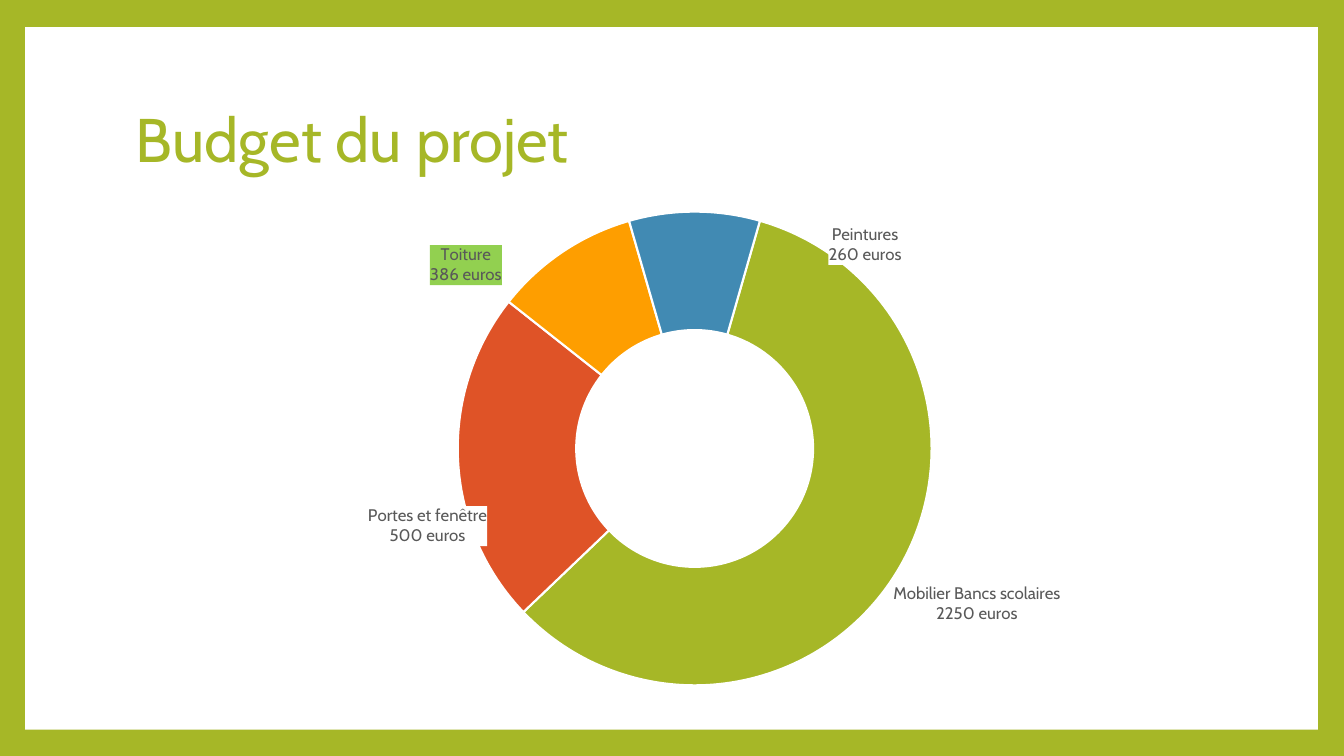
import math

from lxml import etree
from pptx import Presentation
from pptx.chart.data import CategoryChartData
from pptx.dml.color import RGBColor
from pptx.enum import chart as charts, shapes, text
from pptx.oxml.ns import qn
from pptx.util import Inches, Pt

THEME = {
    "font": "Cabin",
    "green": "A6B727", "white": "FFFFFF", "grey": "595959", "highlight": "92D050",
    "title_size": 44, "label_size": 12,
}
TITLE = "Budget du projet"
# expense, amount, share, slice colour, label fill, label centre (x, y)
BUDGET = [
    ("Mobilier Bancs scolaires", "2250 euros", 59, "A6B727", "white", (9.69, 5.99)),
    ("Portes et fenêtre", "500 euros", 23, "DF5327", "white", (4.24, 5.22)),
    ("Toiture", "386 euros", 10, "FE9E00", "highlight", (4.62, 2.63)),
    ("Peintures", "260 euros", 9, "418AB3", "white", (8.58, 2.43)),
]
CHART_BOX = (2.99, 1.96, 7.72, 4.99)
RING_CENTRE = (6.89, 4.45)
RING_RADIUS = 2.35
HOLE_PERCENT = 50
START_ANGLE = 16
C15 = "http://schemas.microsoft.com/office/drawing/2012/chart"


def color(value):
    return RGBColor.from_string(THEME.get(value, value))


def style(font, size, ink):
    values = {"name": THEME["font"], "size": Pt(size), "bold": False}
    for key, value in values.items():
        setattr(font, key, value)
    font.color.rgb = color(ink)


def manual_layout(**values):
    layout = etree.Element(qn("c:layout"))
    manual = etree.SubElement(layout, qn("c:manualLayout"))
    for key, value in values.items():
        etree.SubElement(manual, qn(f"c:{key}")).set("val", str(value))
    return layout


def label_fill(ink):
    properties = etree.Element(qn("c:spPr"))
    solid = etree.SubElement(properties, qn("a:solidFill"))
    etree.SubElement(solid, qn("a:srgbClr")).set("val", THEME[ink])
    return properties


def hide_leader_lines(series):
    labels = series.data_labels._element
    for old in labels.findall(qn("c:showLeaderLines")):
        labels.remove(old)
    etree.SubElement(labels, qn("c:showLeaderLines")).set("val", "0")
    extensions = etree.SubElement(labels, qn("c:extLst"))
    extension = etree.SubElement(extensions, qn("c:ext"), nsmap={"c15": C15})
    extension.set("uri", "{CE6537A1-D6FC-4f65-9D91-7224C49458BB}")
    etree.SubElement(extension, f"{{{C15}}}showLeaderLines").set("val", "0")


def add_frame(slide):
    slide.background.fill.solid()
    slide.background.fill.fore_color.rgb = color("green")
    panel = slide.shapes.add_shape(shapes.MSO_SHAPE.RECTANGLE,
                                   *map(Inches, (0.25, 0.27, 12.82, 6.97)))
    panel.shadow.inherit = False
    panel.fill.solid()
    panel.fill.fore_color.rgb = color("white")
    panel.line.fill.background()


def add_title(slide):
    frame = slide.shapes.add_textbox(*map(Inches, (1.25, 0.67, 10.8, 1.48))).text_frame
    frame.word_wrap = True
    frame.vertical_anchor = text.MSO_ANCHOR.MIDDLE
    heading = frame.paragraphs[0]
    heading.line_spacing = 0.9
    run = heading.add_run()
    run.text = TITLE
    style(run.font, THEME["title_size"], "green")


def add_label(point, lines, ink, offset):
    """Write a slice label, moved from the middle of its ring segment."""
    frame = point.data_label.text_frame
    for number, line in enumerate(lines):
        paragraph = frame.paragraphs[0] if number == 0 else frame.add_paragraph()
        run = paragraph.add_run()
        run.text = line
        style(run.font, THEME["label_size"], "grey")
    # The rich text lives in c:dLbl / c:tx / c:rich
    tx = frame._txBody.getparent()
    for old in tx.getparent().findall(qn("c:layout")):
        tx.getparent().remove(old)
    tx.addprevious(manual_layout(x=offset[0], y=offset[1]))
    tx.addnext(label_fill(ink))


def add_budget_chart(slide):
    data = CategoryChartData()
    data.categories = [row[0] for row in BUDGET]
    data.add_series(TITLE, [row[2] for row in BUDGET])
    left, top, width, height = CHART_BOX
    chart = slide.shapes.add_chart(charts.XL_CHART_TYPE.DOUGHNUT,
                                   *map(Inches, CHART_BOX), data).chart
    chart.has_title = False
    chart.has_legend = False
    style(chart.font, THEME["label_size"], "grey")

    plot = chart.plots[0]
    plot.vary_by_categories = True
    plot.has_data_labels = False
    ring = plot._element
    for tag, value in (("c:firstSliceAng", START_ANGLE), ("c:holeSize", HOLE_PERCENT)):
        ring.find(qn(tag)).set("val", str(value))
    area = ring.getparent()
    for old in area.findall(qn("c:layout")):
        area.remove(old)
    area.insert(0, manual_layout(
        layoutTarget="inner", xMode="edge", yMode="edge",
        x=round((RING_CENTRE[0] - RING_RADIUS - left) / width, 4),
        y=round((RING_CENTRE[1] - RING_RADIUS - top) / height, 4),
        w=round(2 * RING_RADIUS / width, 4),
        h=round(2 * RING_RADIUS / height, 4)))

    slices = plot.series[0]
    total = sum(row[2] for row in BUDGET)
    middle_radius = RING_RADIUS * (1 + HOLE_PERCENT / 100) / 2
    passed = 0
    for index, (expense, amount, share, ink, fill, (x, y)) in enumerate(BUDGET):
        point = slices.points[index]
        point.format.fill.solid()
        point.format.fill.fore_color.rgb = color(ink)
        point.format.line.color.rgb = color("white")
        point.format.line.width = Pt(1.5)
        angle = math.radians(START_ANGLE + 360 * (passed + share / 2) / total)
        passed += share
        middle_x = RING_CENTRE[0] + middle_radius * math.sin(angle)
        middle_y = RING_CENTRE[1] - middle_radius * math.cos(angle)
        add_label(point, (expense, amount), fill, (round((x - middle_x) / width, 4),
                                                   round((y - middle_y) / height, 4)))
    hide_leader_lines(slices)


def main():
    deck = Presentation()
    deck.slide_width, deck.slide_height = Inches(13.33), Inches(7.5)
    slide = deck.slides.add_slide(deck.slide_layouts[6])
    add_frame(slide)
    add_title(slide)
    add_budget_chart(slide)
    deck.save("out.pptx")


if __name__ == "__main__":
    main()
